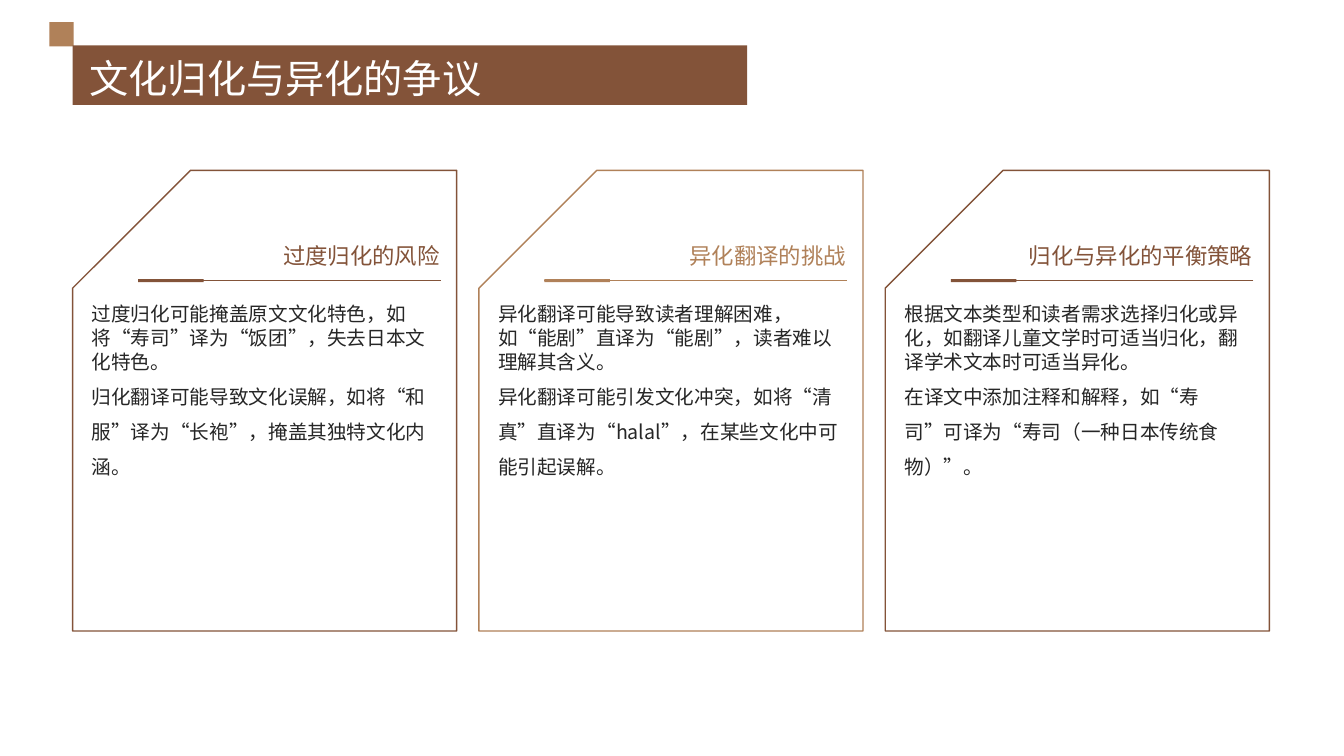
"""Build a slide with three cards on the debate over domestication and foreignization."""
from dataclasses import dataclass

from lxml import etree
from pptx import Presentation
from pptx.dml.color import RGBColor
from pptx.enum.shapes import MSO_CONNECTOR, MSO_SHAPE
from pptx.enum.text import MSO_ANCHOR, PP_ALIGN
from pptx.oxml.ns import qn
from pptx.util import Inches, Pt

RECTANGLE = MSO_SHAPE.RECTANGLE
SNIPPED = MSO_SHAPE.SNIP_1_RECTANGLE
STRAIGHT = MSO_CONNECTOR.STRAIGHT
TOP, MIDDLE, BOTTOM = MSO_ANCHOR.TOP, MSO_ANCHOR.MIDDLE, MSO_ANCHOR.BOTTOM
LEFT, RIGHT = PP_ALIGN.LEFT, PP_ALIGN.RIGHT

TITLE = "文化归化与异化的争议"
CARDS = [
    ("过度归化的风险", [
        "过度归化可能掩盖原文文化特色，如将“寿司”译为“饭团”，失去日本文化特色。",
        "归化翻译可能导致文化误解，如将“和服”译为“长袍”，掩盖其独特文化内涵。",
    ]),
    ("异化翻译的挑战", [
        "异化翻译可能导致读者理解困难，如“能剧”直译为“能剧”，读者难以理解其含义。",
        "异化翻译可能引发文化冲突，如将“清真”直译为“halal”，在某些文化中可能引起误解。",
    ]),
    ("归化与异化的平衡策略", [
        "根据文本类型和读者需求选择归化或异化，如翻译儿童文学时可适当归化，翻译学术文本时可适当异化。",
        "在译文中添加注释和解释，如“寿司”可译为“寿司（一种日本传统食物）”。",
    ]),
]


@dataclass(frozen=True)
class Theme:
    font: str = "Noto Sans CJK SC"
    brown: str = "835339"
    tan: str = "B08159"
    ink: str = "262626"
    white: str = "FFFFFF"
    title_size: int = 28
    heading_size: int = 16
    body_size: int = 14
    line_width: int = 1


THEME = Theme()
CARD_LEFT, CARD_TOP, CARD_WIDTH, CARD_HEIGHT = 0.72, 1.69, 3.81, 4.57
CARD_STEP = 4.03
CARD_SNIP = 0.307
RULE_TOP = 2.78
BODY_SPACINGS = (1.0, 1.5)


def add_block(slide, kind, box, fill, outline=None):
    shape = slide.shapes.add_shape(kind, *map(Inches, box))
    shape.shadow.inherit = False
    shape.fill.solid()
    shape.fill.fore_color.rgb = RGBColor.from_string(fill)
    if outline:
        shape.line.color.rgb = RGBColor.from_string(outline)
        shape.line.width = Pt(THEME.line_width)
    else:
        shape.line.fill.background()
    return shape


def add_text(slide, box, lines, size, color, spacings, anchor=TOP, align=LEFT):
    frame = slide.shapes.add_textbox(*map(Inches, box)).text_frame
    frame.word_wrap = True
    frame.vertical_anchor = anchor
    frame.margin_left = frame.margin_right = frame.margin_top = frame.margin_bottom = 0
    frame.text = "\n".join(lines)
    for paragraph, spacing in zip(frame.paragraphs, spacings):
        paragraph.alignment = align
        paragraph.line_spacing = spacing
        font = paragraph.font
        font.name = THEME.font
        font.size = Pt(size)
        font.color.rgb = RGBColor.from_string(color)
        properties = paragraph._p.get_or_add_pPr().find(qn("a:defRPr"))
        etree.SubElement(properties, qn("a:ea")).set("typeface", THEME.font)


def add_rule(slide, start, end, top, color):
    rule = slide.shapes.add_connector(STRAIGHT, *map(Inches, (start, top, end, top)))
    rule.line.color.rgb = RGBColor.from_string(color)
    rule.line.width = Pt(THEME.line_width)
    etree.SubElement(rule._element.spPr, qn("a:effectLst"))


def add_card(slide, left, color, heading, body):
    card = add_block(slide, SNIPPED, (left, CARD_TOP, CARD_WIDTH, CARD_HEIGHT), THEME.white, color)
    card.adjustments[0] = CARD_SNIP
    card._element.spPr.find(qn("a:xfrm")).set("flipH", "1")
    add_text(slide, (left + 0.19, 3, 3.46, 2.74), body, THEME.body_size, THEME.ink, BODY_SPACINGS)
    add_text(slide, (left + 0.91, 1.92, 2.73, 0.75), [heading], THEME.heading_size, color,
             [1.3], BOTTOM, RIGHT)
    add_rule(slide, left + 3.65, left + 0.65, RULE_TOP, color)
    add_block(slide, RECTANGLE, (left + 0.65, RULE_TOP - 0.01, 0.65, 0.03), color)


def main():
    presentation = Presentation()
    presentation.slide_width, presentation.slide_height = Inches(13.33), Inches(7.5)
    slide = presentation.slides.add_slide(presentation.slide_layouts[6])
    for index, (heading, body) in enumerate(CARDS):
        color = THEME.tan if index % 2 else THEME.brown
        add_card(slide, CARD_LEFT + index * CARD_STEP, color, heading, body)
    add_block(slide, RECTANGLE, (0.49, 0.22, 0.24, 0.24), THEME.tan)
    add_block(slide, RECTANGLE, (0.72, 0.45, 6.69, 0.59), THEME.brown)
    add_text(slide, (0.89, 0.49, 11.7, 0.51), [TITLE], THEME.title_size, THEME.white, [1.1], MIDDLE)
    presentation.save("out.pptx")


if __name__ == "__main__":
    main()
